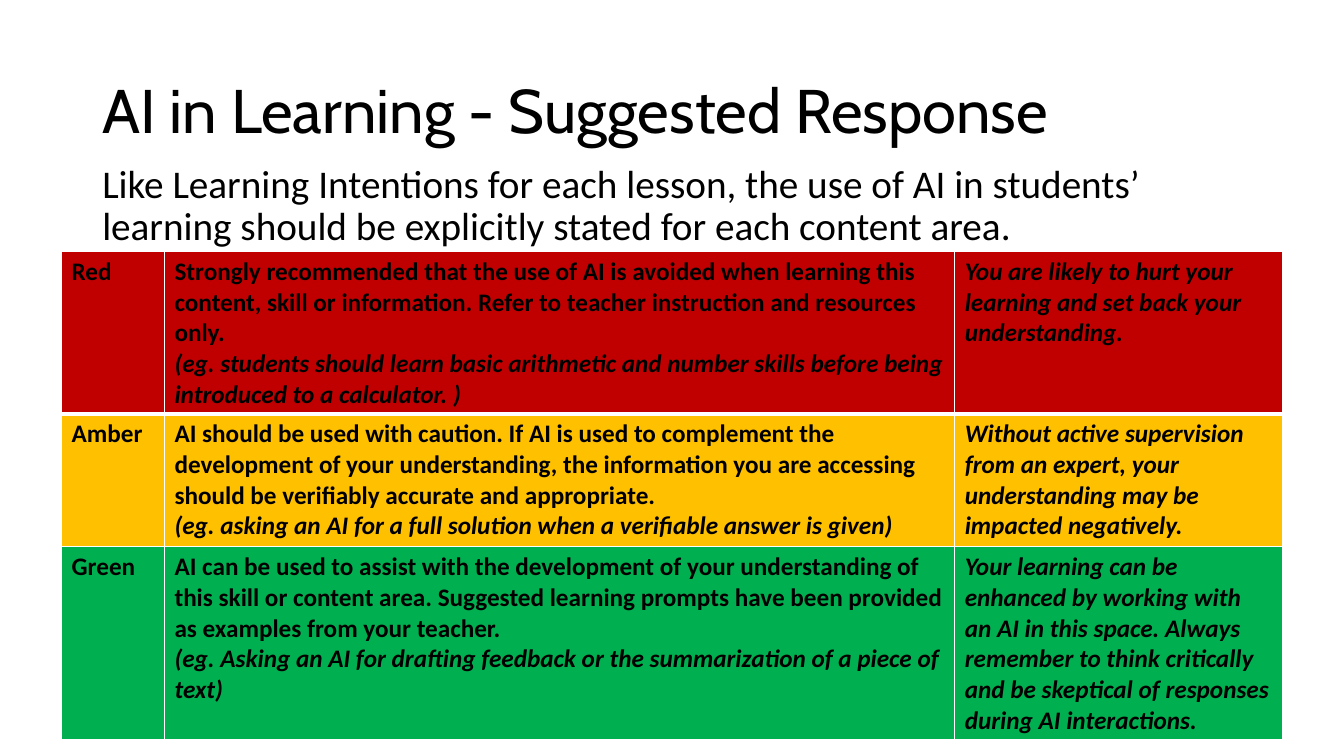
import lxml.etree
import pptx
import pptx.dml.color
import pptx.enum.text
import pptx.oxml.ns
import pptx.util

Pt = pptx.util.Pt

COLOURS = {
    "text": "000000",
    "border": "FFFFFF",
    "red": "C00000",
    "amber": "FFC000",
    "green": "00B050",
}
LINE_BREAK = "\n"

COLUMN_WIDTHS = [73.5, 564.5, 234]
ROW_HEIGHTS = [116, 95, 138]

# Each middle cell is a list of paragraphs; a paragraph is a list of (text, italic) runs.
RESPONSES = [
    ("red", "Red",
     [[("Strongly recommended that the use of AI is avoided when learning this content, "
        "skill or information. Refer to teacher instruction and resources only.", False),
       (LINE_BREAK, False),
       ("(eg. students should learn basic arithmetic and number skills before being "
        "introduced to a calculator. )", True)]],
     "You are likely to hurt your learning and set back your understanding."),
    ("amber", "Amber",
     [[("AI should be used with caution. If AI is used to complement the development of "
        "your understanding, the information you are accessing should be verifiably "
        "accurate and appropriate.", False),
       (LINE_BREAK, False),
       ("(eg. asking an AI for a full solution when a verifiable answer is given)", True)]],
     "Without active supervision from an expert, your understanding may be impacted "
     "negatively."),
    ("green", "Green",
     [[("AI can be used to assist with the development of your understanding of this skill "
        "or content area. Suggested learning prompts have been provided as examples from "
        "your teacher.", False)],
      [("(eg. Asking an AI for drafting feedback or the summarization of a piece of text)",
        True)]],
     "Your learning can be enhanced by working with an AI in this space. Always remember "
     "to think critically and be skeptical of responses during AI interactions."),
]


def rgb(name):
    return pptx.dml.color.RGBColor.from_string(COLOURS[name])


class SlideBuilder:
    title_font = "Cabin"
    body_font = "Calibri"

    def __init__(self, slide):
        self.slide = slide

    def add_run(self, paragraph, text, size, font_name, bold=False, italic=False):
        run = paragraph.add_run()
        run.text = text
        run.font.size = Pt(size)
        run.font.name = font_name
        run.font.bold = bold
        run.font.italic = italic
        run.font.color.rgb = rgb("text")

    def add_text(self, text, left, top, width, height, size, font_name, anchor, space_before=0):
        shape = self.slide.shapes.add_textbox(Pt(left), Pt(top), Pt(width), Pt(height))
        frame = shape.text_frame
        frame.word_wrap = True
        frame.vertical_anchor = anchor
        paragraph = frame.paragraphs[0]
        paragraph.line_spacing = 0.9
        paragraph.space_before = Pt(space_before)
        self.add_run(paragraph, text, size, font_name)

    def add_borders(self, cell, bottom_width):
        properties = cell._tc.get_or_add_tcPr()
        widths = {"lnL": 1, "lnR": 1, "lnT": 1, "lnB": bottom_width}
        for tag, width in widths.items():
            line = lxml.etree.SubElement(properties, pptx.oxml.ns.qn(f"a:{tag}"), w=str(Pt(width)))
            fill = lxml.etree.SubElement(line, pptx.oxml.ns.qn("a:solidFill"))
            lxml.etree.SubElement(fill, pptx.oxml.ns.qn("a:srgbClr"), val=COLOURS["border"])

    def fill_cell(self, cell, paragraphs, colour, bottom_width):
        self.add_borders(cell, bottom_width)
        cell.fill.solid()
        cell.fill.fore_color.rgb = rgb(colour)
        frame = cell.text_frame
        for index, runs in enumerate(paragraphs):
            paragraph = frame.add_paragraph() if index else frame.paragraphs[0]
            for text, italic in runs:
                if text == LINE_BREAK:
                    paragraph.add_line_break()
                else:
                    self.add_run(paragraph, text, 18, self.body_font, True, italic)

    def add_response_table(self, left, top):
        table = self.slide.shapes.add_table(
            len(RESPONSES), len(COLUMN_WIDTHS), Pt(left), Pt(top),
            Pt(sum(COLUMN_WIDTHS)), Pt(sum(ROW_HEIGHTS))).table
        for column, width in zip(table.columns, COLUMN_WIDTHS):
            column.width = Pt(width)
        for index, (colour, label, guidance, effect) in enumerate(RESPONSES):
            table.rows[index].height = Pt(ROW_HEIGHTS[index])
            bottom_width = 3 if index == 0 else 1
            contents = [[[(label, False)]], guidance, [[(effect, True)]]]
            for cell, paragraphs in zip(table.rows[index].cells, contents):
                self.fill_cell(cell, paragraphs, colour, bottom_width)


def main():
    presentation = pptx.Presentation()
    presentation.slide_width = Pt(960)
    presentation.slide_height = Pt(540)
    builder = SlideBuilder(presentation.slides.add_slide(presentation.slide_layouts[6]))
    anchors = pptx.enum.text.MSO_ANCHOR
    builder.add_text("AI in Learning - Suggested Response",
                     66, 28.75, 828, 104.4, 44, builder.title_font, anchors.MIDDLE)
    builder.add_text("Like Learning Intentions for each lesson, the use of AI in students’ "
                     "learning should be explicitly stated for each content area.",
                     66, 113.75, 828, 342.6, 28, builder.body_font, anchors.TOP, 10)
    builder.add_response_table(44, 179.5)
    presentation.save("out.pptx")


if __name__ == "__main__":
    main()
